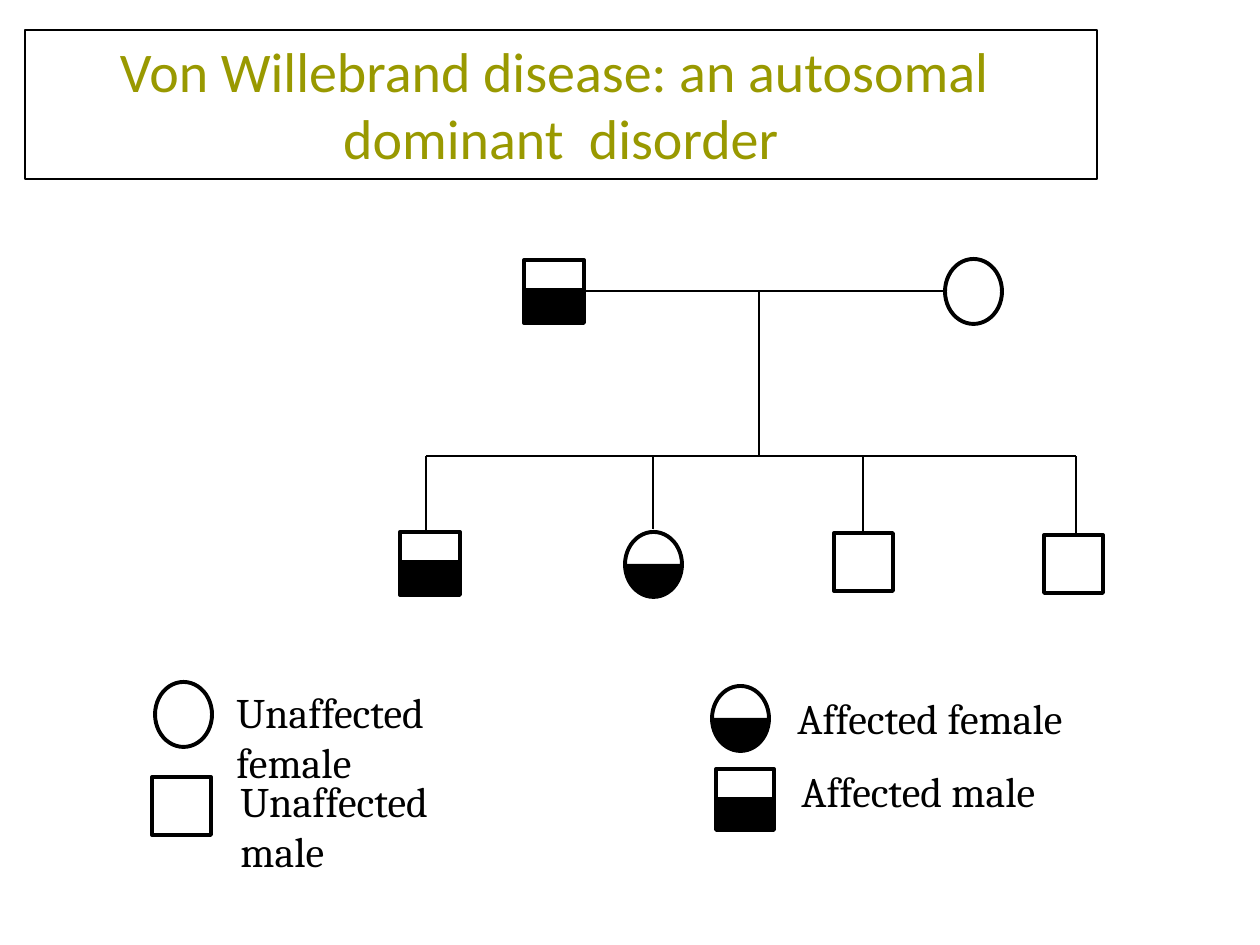
"""Build a pedigree slide for Von Willebrand disease with a symbol legend."""
from lxml.etree import SubElement
from pptx import Presentation
from pptx.dml.color import RGBColor
from pptx.enum.shapes import MSO_CONNECTOR, MSO_SHAPE
from pptx.enum.text import MSO_ANCHOR, PP_ALIGN
from pptx.oxml.ns import qn
from pptx.util import Pt

SCALE = 914400 / 126
COLORS = {"ink": "000000", "title": "999900"}
INK = RGBColor.from_string(COLORS["ink"])
TITLE_FONT = {"name": "Calibri", "size": Pt(32)}
LEGEND_FONT = {"name": "Cambria", "size": Pt(24)}


def draw(parent, kind, box, weight=2.25, filled=False):
    shape = parent.add_shape(kind, *(round(v * SCALE) for v in box))
    shape.shadow.inherit = False
    shape.line.color.rgb = INK
    shape.line.width = Pt(weight)
    if filled:
        shape.fill.solid()
        shape.fill.fore_color.rgb = INK
    else:
        shape.fill.background()
    return shape


def write(frame, lines, font, color, align, anchor):
    for key, value in {"word_wrap": True, "vertical_anchor": anchor}.items():
        setattr(frame, key, value)
    for index, line in enumerate(lines):
        paragraph = frame.add_paragraph() if index else frame.paragraphs[0]
        paragraph.alignment = align
        run = paragraph.add_run()
        run.text = line
        run.font.color.rgb = RGBColor.from_string(COLORS[color])
        for key, value in font.items():
            setattr(run.font, key, value)


deck = Presentation()
deck.slide_width = round(1260 * SCALE)
deck.slide_height = round(945 * SCALE)
slide = deck.slides.add_slide(deck.slide_layouts[6])

sibling_y, parent_y = 456, 291
child_drops = [(426, 532), (653, 529), (863, 532), (1076, 535)]
descent_lines = [
    (child_drops[0][0], sibling_y, child_drops[-1][0], sibling_y),
    (759, sibling_y, 759, parent_y),
    (582, parent_y, 945, parent_y),
] + [(x, y, x, sibling_y) for x, y in child_drops]
for ends in descent_lines:
    descent = slide.shapes.add_connector(
        MSO_CONNECTOR.STRAIGHT, *(round(v * SCALE) for v in ends))
    descent.line.color.rgb = INK
    descent.line.width = Pt(0.75)
    SubElement(descent.element.spPr, qn("a:effectLst"))

title = draw(slide.shapes, MSO_SHAPE.RECTANGLE, (25, 30, 1072, 149), 0.75)
write(title.text_frame,
      ["Von Willebrand disease: an autosomal ", "dominant  disorder"],
      TITLE_FONT, "title", PP_ALIGN.CENTER, MSO_ANCHOR.TOP)

unaffected_males = [(834, 533), (1044, 535), (152, 777)]
for x, y in unaffected_males:
    draw(slide.shapes, MSO_SHAPE.RECTANGLE, (x, y, 59, 58))

unaffected_females = [(945, 259), (155, 682)]
for x, y in unaffected_females:
    draw(slide.shapes, MSO_SHAPE.OVAL, (x, y, 57, 65))

affected_males = [(524, 260, 60, 33), (400, 532, 60, 33), (716, 769, 58, 31)]
for x, y, width, half in affected_males:
    affected_male = slide.shapes.add_group_shape().shapes
    draw(affected_male, MSO_SHAPE.RECTANGLE, (x, y, width, half))
    draw(affected_male, MSO_SHAPE.RECTANGLE, (x, y + 30, width, half), filled=True)

affected_females = [(625, 532), (712, 686)]
for x, y in affected_females:
    affected_female = slide.shapes.add_group_shape().shapes
    draw(affected_female, MSO_SHAPE.OVAL, (x, y, 57, 65))
    lower_half = draw(affected_female, MSO_SHAPE.CHORD, (x, y, 57, 65), 0.75, True)
    lower_half.adjustments[0] = 0
    lower_half.adjustments[1] = 108

legend = [
    ("Unaffected female", 224, 680, 330),
    ("Unaffected male", 228, 769, 298),
    ("Affected female", 785, 686, 296),
    ("Affected male", 789, 759, 265),
]
for meaning, x, y, width in legend:
    label = slide.shapes.add_textbox(*(round(v * SCALE) for v in (x, y, width, 63)))
    write(label.text_frame, [meaning], LEGEND_FONT, "ink", PP_ALIGN.LEFT, MSO_ANCHOR.TOP)

deck.save("out.pptx")
